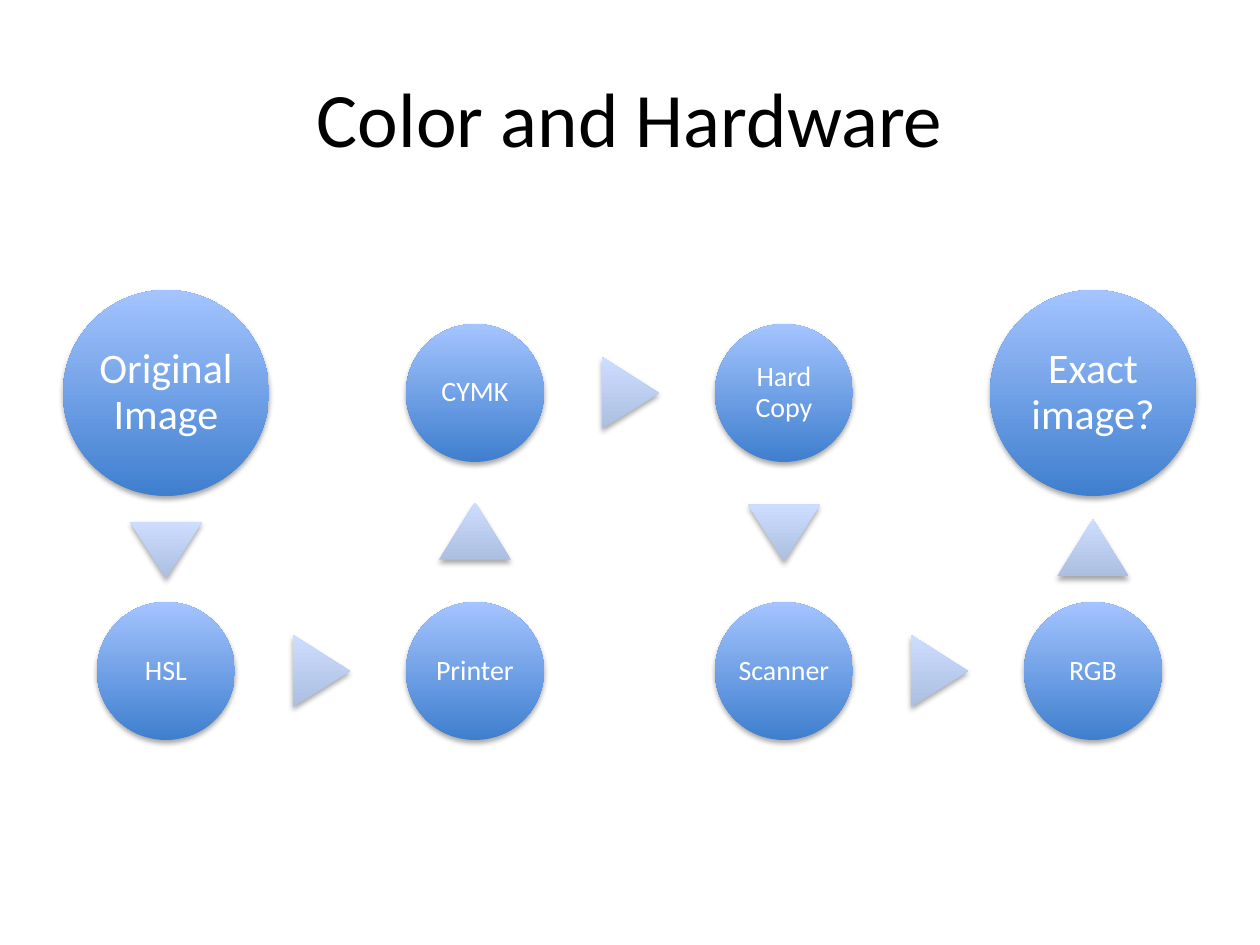
from dataclasses import dataclass
from itertools import pairwise

from lxml.etree import SubElement
from pptx import Presentation
from pptx.dml.color import RGBColor
from pptx.enum.shapes import MSO_SHAPE
from pptx.enum.text import MSO_ANCHOR, PP_ALIGN
from pptx.oxml.ns import qn
from pptx.util import Emu, Pt

PX_PER_INCH = 126


def px(length):
    return Emu(round(length * 914400 / PX_PER_INCH))


@dataclass(frozen=True)
class Theme:
    font: str = "Calibri"
    title_size: int = 44
    large_size: int = 24
    small_size: int = 16
    title_color: str = "000000"
    label_color: str = "FFFFFF"
    circle_gradient: tuple = ("3F7FCE", "A4C4FF")
    arrow_gradient: tuple = ("ADBFE1", "CCDDFF")
    shadow_color: str = "000000"


@dataclass(frozen=True)
class Step:
    label: str
    column: int
    row: int
    large: bool = False

    @property
    def center(self):
        return 166 + 309 * self.column, 393 + 278 * self.row

    @property
    def diameter(self):
        return 206 if self.large else 138


STEPS = [
    Step("Original Image", 0, 0, large=True),
    Step("HSL", 0, 1),
    Step("Printer", 1, 1),
    Step("CYMK", 1, 0),
    Step("Hard Copy", 2, 0),
    Step("Scanner", 2, 1),
    Step("RGB", 3, 1),
    Step("Exact image?", 3, 0, large=True),
]


class SlideBuilder:
    ARROW_WIDTH, ARROW_HEIGHT = 72, 57

    def __init__(self, page, theme):
        self.page = page
        self.theme = theme
        self.group = page.shapes.add_group_shape()

    def text(self, box, label, size, color, margin, line_spacing=1.0):
        frame = box.text_frame
        frame_format = {
            "word_wrap": True,
            "vertical_anchor": MSO_ANCHOR.MIDDLE,
            "margin_left": px(margin),
            "margin_right": px(margin),
            "margin_top": px(margin),
            "margin_bottom": px(margin),
        }
        for name, value in frame_format.items():
            setattr(frame, name, value)
        para = frame.paragraphs[0]
        para.alignment = PP_ALIGN.CENTER
        para.line_spacing = line_spacing
        span = para.add_run()
        span.text = label
        for name, value in {"name": self.theme.font, "size": Pt(size)}.items():
            setattr(span.font, name, value)
        span.font.color.rgb = RGBColor.from_string(color)

    def title(self, label):
        box = self.page.shapes.title
        place = {"left": 63, "top": 38, "width": 1134, "height": 158}
        for name, value in place.items():
            setattr(box, name, px(value))
        self.text(box, label, self.theme.title_size, self.theme.title_color, 12)

    def shape(self, kind, center, width, height, gradient):
        """Add a centred shape with an upright gradient and a soft shadow."""
        x, y = center
        shape = self.group.shapes.add_shape(
            kind, px(x - width / 2), px(y - height / 2), px(width), px(height))
        shape.line.fill.background()
        shape.fill.gradient()
        shape.fill.gradient_angle = 90
        for stop, position, color in zip(shape.fill.gradient_stops, (0, 1), gradient):
            stop.position = position
            stop.color.rgb = RGBColor.from_string(color)
        properties = shape._element.spPr
        properties.find(qn("a:gradFill")).set("rotWithShape", "0")
        shape.shadow.inherit = False
        shadow = SubElement(
            properties.find(qn("a:effectLst")), qn("a:outerShdw"),
            blurRad="40000", dist="23000", dir="5400000", rotWithShape="0")
        color = SubElement(shadow, qn("a:srgbClr"), val=self.theme.shadow_color)
        SubElement(color, qn("a:alpha"), val="35000")
        return shape

    def circle(self, step):
        theme = self.theme
        circle = self.shape(MSO_SHAPE.OVAL, step.center, step.diameter,
                            step.diameter, theme.circle_gradient)
        size, margin = (theme.large_size, 4) if step.large else (theme.small_size, 3)
        self.text(circle, step.label, size, theme.label_color, margin, 0.9)

    def arrow(self, start, end):
        """Point a triangle along the flow, midway between the facing edges."""
        (x1, y1), (x2, y2) = start.center, end.center
        right = (x2 > x1) - (x2 < x1)
        down = (y2 > y1) - (y2 < y1)
        shift = (start.diameter - end.diameter) / 4 + 1
        center = (x1 + x2) / 2 + right * shift, (y1 + y2) / 2 + down * shift
        triangle = self.shape(MSO_SHAPE.ISOSCELES_TRIANGLE, center, self.ARROW_WIDTH,
                              self.ARROW_HEIGHT, self.theme.arrow_gradient)
        triangle.rotation = {(0, -1): 0, (1, 0): 90, (0, 1): 180}[right, down]


def main():
    deck = Presentation()
    deck.slide_width, deck.slide_height = px(1260), px(945)
    page = deck.slides.add_slide(deck.slide_layouts[5])
    builder = SlideBuilder(page, Theme())
    builder.title("Color and Hardware")
    for step in STEPS:
        builder.circle(step)
    for start, end in pairwise(STEPS):
        builder.arrow(start, end)
    deck.save("out.pptx")


if __name__ == "__main__":
    main()
